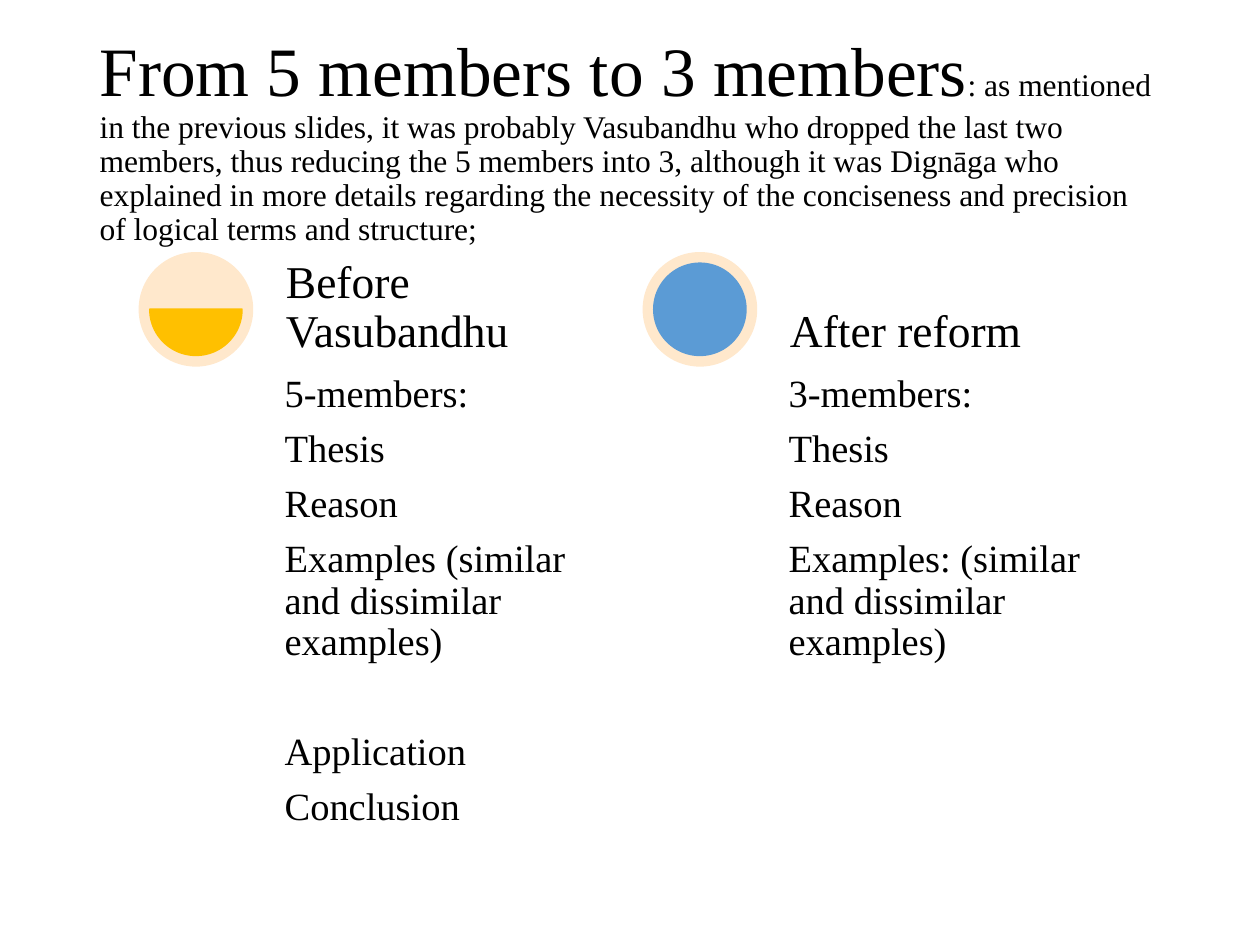
import pptx
import pptx.util
from pptx.util import Inches, Pt
from pptx.dml.color import RGBColor
from pptx.enum.shapes import MSO_SHAPE
from pptx.enum.text import MSO_ANCHOR, MSO_AUTO_SIZE, PP_ALIGN

FONT = "Times New Roman"
COLORS = {"text": "000000", "ring": "FFE8CC", "gold": "FFC000", "blue": "5B9BD5"}

TITLE = [
    ("From 5 members to 3 members", 39.6),
    (": as mentioned in the previous slides, it was probably Vasubandhu who "
     "dropped the last two members, thus reducing the 5 members into 3, although "
     "it was Dignāga who explained in more details regarding the necessity of the "
     "conciseness and precision of logical terms and structure;", 18),
]

# Each column: heading, members, later members set apart, chord colour and angles
COLUMNS = [
    {"head": "Before Vasubandhu",
     "members": ["5-members:", "Thesis", "Reason",
                 "Examples (similar and dissimilar examples)"],
     "dropped": ["Application", "Conclusion"],
     "color": "gold", "angles": (0, 108)},
    {"head": "After reform",
     "members": ["3-members:", "Thesis", "Reason",
                 "Examples: (similar and dissimilar examples)"],
     "dropped": [],
     "color": "blue", "angles": (162, 162)},
]

LEFT, TOP, PITCH = 1.1, 2, 4      # first column and column step
RING, INSET = 0.91, 0.09          # ring size and chord margin
TEXT_X, TEXT_W, LIST_H = 1.1, 2.7, 3.85
GAP = 31.4                        # space before the dropped members


def rgb(name):
    return RGBColor.from_string(COLORS[name])


def style(para, size=None):
    para.font.name = FONT
    para.font.color.rgb = rgb("text")
    para.line_spacing = 0.9
    para.alignment = PP_ALIGN.LEFT
    if size:
        para.font.size = Pt(size)
        para.space_after = Pt(size * 0.35)


def add_disc(group, kind, x, y, size, color):
    disc = group.shapes.add_shape(kind, Inches(x), Inches(y), Inches(size), Inches(size))
    disc.shadow.inherit = False
    disc.fill.solid()
    disc.fill.fore_color.rgb = rgb(color)
    disc.line.fill.background()
    return disc


def add_text(group, x, y, height, lines, size, pad, anchor):
    box = group.shapes.add_textbox(Inches(x), Inches(y), Inches(TEXT_W), Inches(height))
    frame = box.text_frame
    frame.word_wrap = True
    frame.vertical_anchor = anchor
    frame.margin_left = frame.margin_right = Inches(pad)
    frame.margin_top = frame.margin_bottom = Inches(pad)
    frame.text = "\n".join(lines)
    for para in frame.paragraphs:
        style(para, size)
    return frame


def add_column(slide, col, x):
    group = slide.shapes.add_group_shape()
    add_disc(group, MSO_SHAPE.OVAL, x, TOP, RING, "ring")
    chord = add_disc(group, MSO_SHAPE.CHORD, x + INSET, TOP + INSET,
                     RING - 2 * INSET, col["color"])
    chord.adjustments[0], chord.adjustments[1] = col["angles"]
    chord.line.color.rgb = rgb(col["color"])
    chord.line.width = Pt(1)

    members = add_text(group, x + TEXT_X, TOP + RING, LIST_H,
                       col["members"] + col["dropped"], 22, 0.06, MSO_ANCHOR.TOP)
    if col["dropped"]:
        members.paragraphs[len(col["members"])].space_before = Pt(GAP)
    add_text(group, x + TEXT_X, TOP, RING, [col["head"]], 26, 0.07, MSO_ANCHOR.BOTTOM)


def main():
    deck = pptx.Presentation()
    deck.slide_width, deck.slide_height = Inches(10), Inches(7.5)
    slide = deck.slides.add_slide(deck.slide_layouts[5])

    # Title
    title = slide.shapes.title
    title.left, title.top = Inches(0.69), Inches(0.4)
    title.width, title.height = Inches(8.62), Inches(1.45)
    frame = title.text_frame
    frame.auto_size = MSO_AUTO_SIZE.NONE
    frame.vertical_anchor = MSO_ANCHOR.MIDDLE
    para = frame.paragraphs[0]
    style(para)
    for text, size in TITLE:
        run = para.add_run()
        run.text = text
        run.font.size = Pt(size)

    # Comparison columns
    for i, col in enumerate(COLUMNS):
        add_column(slide, col, LEFT + i * PITCH)

    deck.save("out.pptx")


if __name__ == "__main__":
    main()
